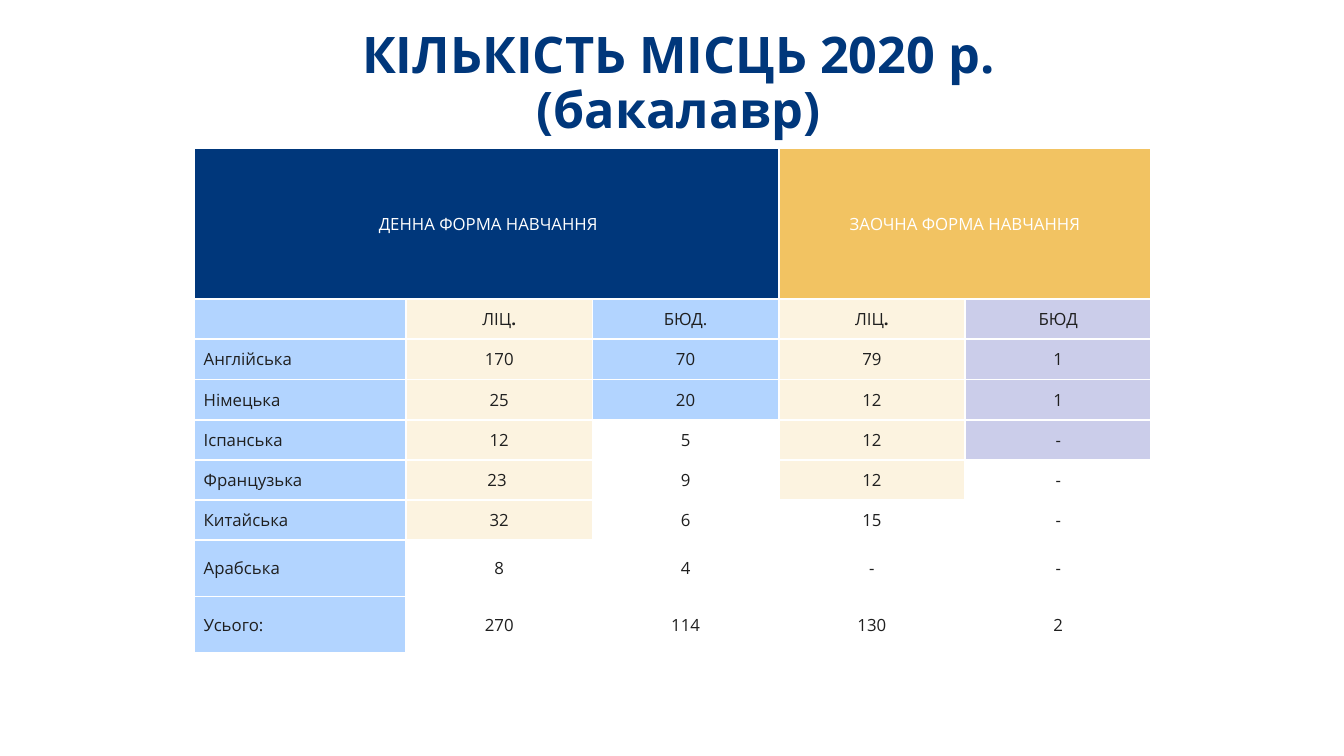
from lxml.etree import SubElement
from pptx import Presentation
from pptx.dml.color import RGBColor
from pptx.enum.text import MSO_ANCHOR as Anchor, PP_ALIGN as Align
from pptx.oxml.ns import qn
from pptx.util import Inches, Pt

FONT = "Open Sans"
COLORS = {
    "navy": "00377B", "gold": "F2C362", "blue": "B2D4FF", "cream": "FCF3E0",
    "lilac": "CBCDEA", "white": "FFFFFF", "ink": "1F1F1F",
}
TITLE = ["КІЛЬКІСТЬ МІСЦЬ 2020 р.", "(бакалавр)"]
FORMS = [(0, 2, " ДЕННА ФОРМА НАВЧАННЯ", "navy"), (3, 4, "ЗАОЧНА ФОРМА НАВЧАННЯ", "gold")]
PLACES = [
    ["", "ЛІЦ.", "БЮД.", "ЛІЦ.", "БЮД"],
    ["Англійська", "170", "70", "79", "1"],
    ["Німецька", "25", "20", "12", "1"],
    ["Іспанська", "12", "5", "12", "-"],
    ["Французька", "23 ", "9", "12", "-"],
    ["Китайська", "32", "6", "15", "-"],
    ["Арабська", "8", "4", "-", "-"],
    ["Усього:", "270", "114", "130", "2"],
]
COLUMN_FILLS = [("blue", 8), ("cream", 6), ("blue", 3), ("cream", 5), ("lilac", 4)]
COLUMN_WIDTHS = [2.11] + [1.85] * 4
ROW_HEIGHTS = [1.5] + [0.4] * 6 + [0.56] * 2


def color(name):
    return RGBColor.from_string(COLORS[name])


def style_span(span, size, ink, bold=False):
    span.font.name = FONT
    span.font.size = Pt(size)
    span.font.bold = bold
    span.font.color.rgb = color(ink)


def add_borders(cell):
    properties = cell._tc.get_or_add_tcPr()
    for position, side in enumerate(("lnL", "lnR", "lnT", "lnB")):
        line = properties.makeelement(qn(f"a:{side}"), {"w": str(Pt(1.5))})
        fill = SubElement(line, qn("a:solidFill"))
        SubElement(fill, qn("a:srgbClr"), val=COLORS["white"])
        properties.insert(position, line)


def fill_cell(cell, text, fill, ink="ink", align=Align.CENTER):
    cell.vertical_anchor = Anchor.MIDDLE
    if fill:
        cell.fill.solid()
        cell.fill.fore_color.rgb = color(fill)
    else:
        cell.fill.background()
    para = cell.text_frame.paragraphs[0]
    para.alignment = align
    if not text:
        SubElement(para._p, qn("a:endParaRPr"), sz="1200")
    elif text == "ЛІЦ.":
        for part, bold in ((text[:-1], False), (text[-1], True)):
            span = para.add_run()
            span.text = part
            style_span(span, 12, ink, bold)
    else:
        para.text = text
        style_span(para.runs[0], 12, ink)


def add_places_table(page, left, top, width, height):
    table = page.shapes.add_table(
        len(ROW_HEIGHTS), len(COLUMN_WIDTHS),
        Inches(left), Inches(top), Inches(width), Inches(height)).table
    table.horz_banding = False
    for column, share in zip(table.columns, COLUMN_WIDTHS):
        column.width = Inches(width * share / sum(COLUMN_WIDTHS))
    for row, share in zip(table.rows, ROW_HEIGHTS):
        row.height = Inches(height * share / sum(ROW_HEIGHTS))
    for first, last, text, fill in FORMS:
        table.cell(0, first).merge(table.cell(0, last))
        fill_cell(table.cell(0, first), text, fill, "white")
    for row, values in enumerate(PLACES, 1):
        for column, value in enumerate(values):
            fill, depth = COLUMN_FILLS[column]
            align = Align.CENTER if column else Align.LEFT
            fill_cell(table.cell(row, column), value, fill if row <= depth else None, align=align)
    for cell in table.iter_cells():
        add_borders(cell)


def add_title(page, left, top, width, height):
    box = page.shapes.add_textbox(Inches(left), Inches(top), Inches(width), Inches(height))
    frame = box.text_frame
    frame.word_wrap = True
    frame.text = "\n".join(TITLE)
    for para in frame.paragraphs:
        para.alignment = Align.CENTER
        para.line_spacing = 0.9
        style_span(para.runs[0], 36, "navy", True)


def main():
    deck = Presentation()
    deck.slide_width, deck.slide_height = Inches(13.33), Inches(7.5)
    page = deck.slides.add_slide(deck.slide_layouts[6])
    add_places_table(page, 1.92, 1.47, 9.5, 5.01)
    add_title(page, 1.02, 0.25, 11.42, 1.31)
    deck.save("out.pptx")


if __name__ == "__main__":
    main()
